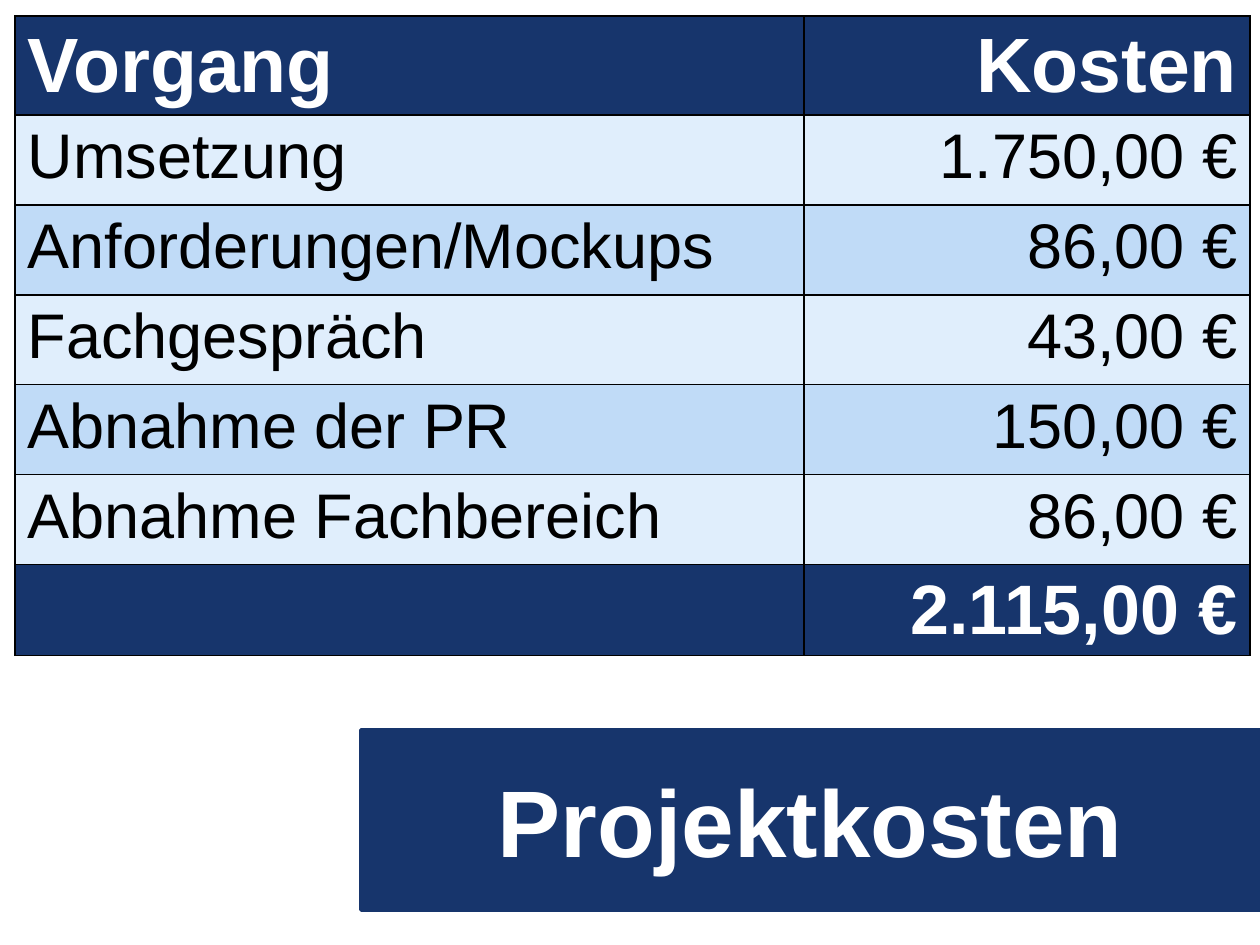
from lxml import etree
from pptx import Presentation
from pptx.dml.color import RGBColor
from pptx.enum.shapes import MSO_SHAPE as Shape
from pptx.enum.text import MSO_ANCHOR as Anchor, PP_ALIGN as Align
from pptx.oxml.ns import qn
from pptx.util import Emu, Pt

EMU_PER_PX = 914400 // 126
NAVY = RGBColor(0x17, 0x35, 0x6C)
PALE = RGBColor(0xE0, 0xEE, 0xFC)
SKY = RGBColor(0xC0, 0xDB, 0xF7)
WHITE = RGBColor(0xFF, 0xFF, 0xFF)
BLACK = RGBColor(0, 0, 0)

HEADER = ("Vorgang", "Kosten")
COSTS = [
    ("Umsetzung", "1.750,00 €"),
    ("Anforderungen/Mockups", "86,00 €"),
    ("Fachgespräch", "43,00 €"),
    ("Abnahme der PR", "150,00 €"),
    ("Abnahme Fachbereich", "86,00 €"),
]
TOTAL = ("", "2.115,00 €")


def px(length):
    return Emu(length * EMU_PER_PX)


def write(frame, text, *, size, color, bold=False, align=Align.LEFT, font="Arial"):
    paragraph = frame.paragraphs[0]
    paragraph.alignment = align
    if not text:
        return
    run = paragraph.add_run()
    run.text = text
    run.font.name = font
    run.font.size = Pt(size)
    run.font.bold = bold
    run.font.color.rgb = color


def outline_cell(cell, color, width):
    """Draw all four borders; they must precede the fill in the cell XML."""
    properties = cell._tc.get_or_add_tcPr()
    for index, side in enumerate(("lnL", "lnR", "lnT", "lnB")):
        border = etree.Element(qn(f"a:{side}"), w=str(Pt(width)))
        fill = etree.SubElement(border, qn("a:solidFill"))
        etree.SubElement(fill, qn("a:srgbClr"), val=str(color))
        properties.insert(index, border)


class CostSlide:
    def __init__(self, presentation):
        self.slide = presentation.slides.add_slide(presentation.slide_layouts[6])
        self.heading = {"color": WHITE, "bold": True}
        self.body = {"color": BLACK, "size": 36}

    def banner(self, text, left, top, width, height):
        bar = self.slide.shapes.add_shape(
            Shape.RECTANGLE, px(left), px(top), px(width), px(height))
        bar.shadow.inherit = False
        bar.fill.solid()
        bar.fill.fore_color.rgb = NAVY
        bar.line.color.rgb = NAVY
        bar.line.width = Pt(2)
        bar.text_frame.vertical_anchor = Anchor.MIDDLE
        write(bar.text_frame, text, size=54, align=Align.CENTER, **self.heading)

    def cost_table(self, left, top, column_widths, header_height, row_height):
        rows = [(HEADER, NAVY, {"size": 44, **self.heading})]
        rows += [(entry, SKY if index % 2 else PALE, self.body)
                 for index, entry in enumerate(COSTS)]
        rows.append((TOTAL, NAVY, {"size": 40, **self.heading}))

        height = header_height + row_height * (len(rows) - 1)
        table = self.slide.shapes.add_table(
            len(rows), len(column_widths), px(left), px(top),
            px(sum(column_widths)), px(height)).table
        for column, width in zip(table.columns, column_widths):
            column.width = px(width)
        for index, (entry, fill, style) in enumerate(rows):
            table.rows[index].height = px(row_height if index else header_height)
            for column, text in enumerate(entry):
                cell = table.cell(index, column)
                cell.fill.solid()
                cell.fill.fore_color.rgb = fill
                outline_cell(cell, BLACK, 1)
                write(cell.text_frame, text,
                      align=Align.RIGHT if column else Align.LEFT, **style)


def main():
    presentation = Presentation()
    presentation.slide_width = px(1260)
    presentation.slide_height = px(945)
    slide = CostSlide(presentation)
    slide.banner("Projektkosten", 361, 730, 899, 180)
    slide.cost_table(15, 16, (789, 446), header_height=95, row_height=90)
    presentation.save("out.pptx")


if __name__ == "__main__":
    main()
